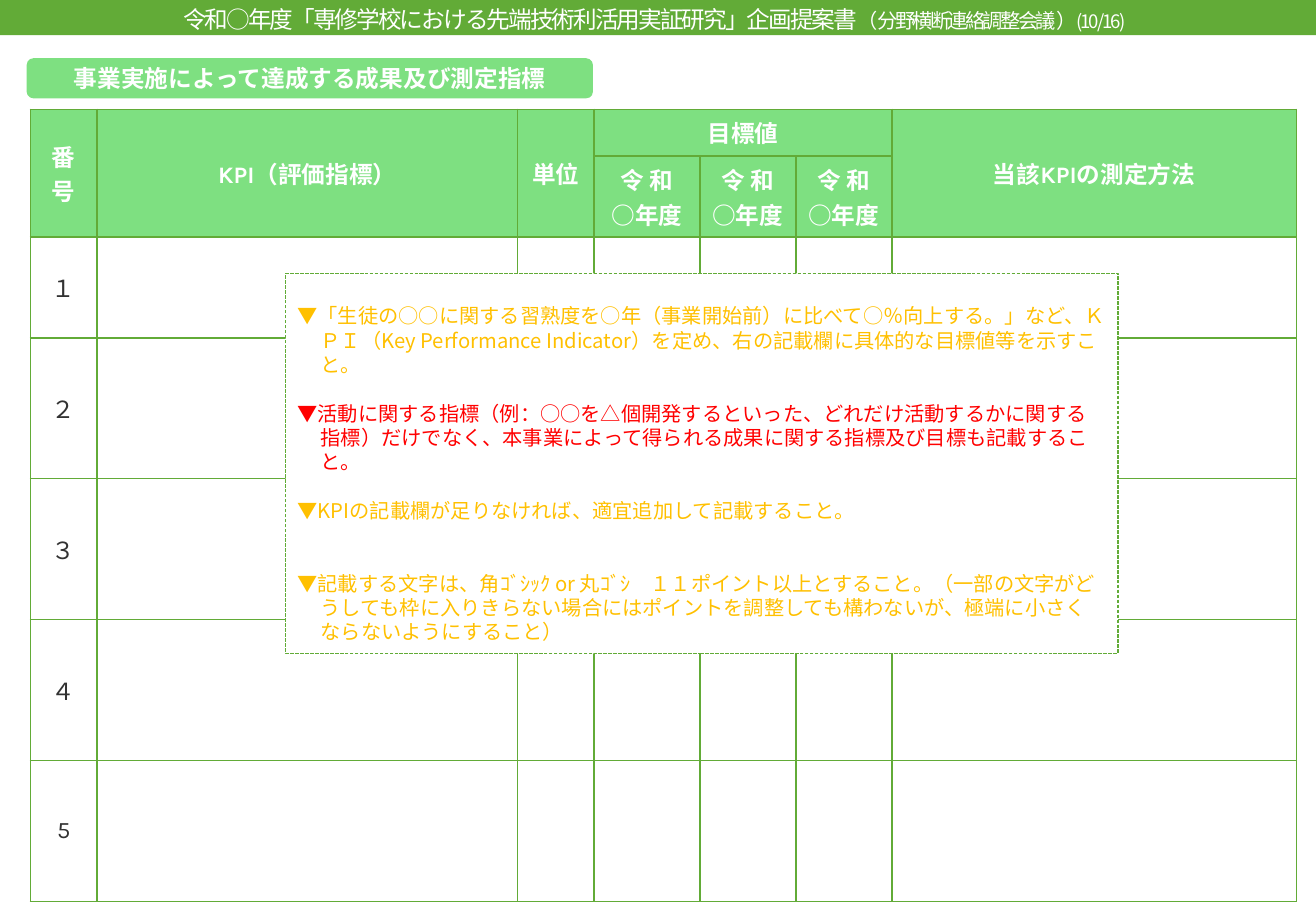
from dataclasses import dataclass

from pptx import Presentation
from pptx.dml.color import RGBColor
from pptx.enum.dml import MSO_LINE
from pptx.enum.shapes import MSO_SHAPE as Shape
from pptx.enum.text import MSO_ANCHOR as Anchor, PP_ALIGN as Align
from pptx.oxml import parse_xml
from pptx.oxml.ns import nsdecls
from pptx.util import Inches, Pt


@dataclass(frozen=True)
class Theme:
    green: str = "62AB37"
    light_green: str = "7EE081"
    white: str = "FFFFFF"
    ink: str = "323232"
    amber: str = "FFC000"
    red: str = "FF0000"
    latin: str = "Karla"
    japanese: str = "Noto Sans CJK JP"
    heading_size: float = 14
    guide_size: float = 12
    page_size: float = 11
    guide_pitch: float = 14.4


class Page:
    def __init__(self, deck, theme):
        self.theme = theme
        self.shapes = deck.slides.add_slide(deck.slide_layouts[6]).shapes

    def style(self, span, size, color, font, bold=False, spacing=0):
        span.font.size = Pt(size)
        span.font.bold = bold
        span.font.color.rgb = RGBColor.from_string(color)
        span.font.name = font
        properties = span._r.get_or_add_rPr()
        properties.append(parse_xml(f'<a:ea {nsdecls("a")} typeface="{self.theme.japanese}"/>'))
        if spacing:
            properties.set("spc", str(round(spacing * 100)))

    def shape(self, kind, place, fill):
        box = self.shapes.add_shape(kind, *map(Inches, place))
        box.shadow.inherit = False
        box.fill.solid()
        box.fill.fore_color.rgb = RGBColor.from_string(fill)
        box.line.fill.background()
        return box

    def section(self, text, place):
        box = self.shape(Shape.ROUNDED_RECTANGLE, place, self.theme.light_green)
        frame = box.text_frame
        frame.text = text
        frame.vertical_anchor = Anchor.MIDDLE
        para = frame.paragraphs[0]
        para.alignment = Align.CENTER
        self.style(para.runs[0], self.theme.heading_size, self.theme.white, self.theme.latin, True)

    def title(self, pieces, place):
        box = self.shapes.add_textbox(*map(Inches, place))
        frame = box.text_frame
        frame.word_wrap = True
        frame.margin_top = Inches(0.04)
        para = frame.paragraphs[0]
        para.alignment = Align.CENTER
        for text, size, spacing in pieces:
            span = para.add_run()
            span.text = text
            self.style(span, size, self.theme.white, self.theme.japanese, spacing=spacing)

    def guidance(self, guides, place):
        box = self.shape(Shape.RECTANGLE, place, self.theme.white)
        box.line.color.rgb = RGBColor.from_string(self.theme.green)
        box.line.width = Pt(0.75)
        box.line.dash_style = MSO_LINE.SQUARE_DOT
        frame = box.text_frame
        frame.word_wrap = True
        frame.vertical_anchor = Anchor.TOP
        frame.margin_top = Inches(0.25)
        frame.text = "\n".join(text for text, color, gap in guides)
        for para, (text, color, gap) in zip(frame.paragraphs, guides):
            para.alignment = Align.LEFT
            para.line_spacing = Pt(self.theme.guide_pitch)
            para.space_before = Pt(gap * self.theme.guide_pitch)
            properties = para._p.get_or_add_pPr()
            properties.set("marL", str(Inches(0.19)))
            properties.set("indent", str(-Inches(0.19)))
            self.style(para.runs[0], self.theme.guide_size, color, self.theme.japanese)

    def table(self, place, widths, heights, merges, texts, header_rows):
        grid = self.shapes.add_table(len(heights), len(widths), *map(Inches, place)).table
        grid.first_row = grid.horz_banding = False
        for column, width in zip(grid.columns, widths):
            column.width = Inches(width)
        for row, height in zip(grid.rows, heights):
            row.height = Inches(height)
        for start, end in merges:
            grid.cell(*start).merge(grid.cell(*end))
        for row in range(len(heights)):
            for column in range(len(widths)):
                header = row < header_rows
                self.cell(grid.cell(row, column), texts.get((row, column), ""), header)

    def cell(self, cell, text, header):
        properties = cell._tc.get_or_add_tcPr()
        for side in "LRTB":
            properties.append(parse_xml(
                f'<a:ln{side} {nsdecls("a")} w="{Pt(1)}"><a:solidFill>'
                f'<a:srgbClr val="{self.theme.green}"/></a:solidFill></a:ln{side}>'))
        if header:
            cell.fill.solid()
            cell.fill.fore_color.rgb = RGBColor.from_string(self.theme.light_green)
        else:
            cell.fill.background()
        cell.vertical_anchor = Anchor.MIDDLE
        cell.text_frame.text = text
        font = self.theme.japanese if "\n" in text else self.theme.latin
        color = self.theme.white if header else self.theme.ink
        for para in cell.text_frame.paragraphs:
            para.alignment = Align.CENTER
            for span in para.runs:
                self.style(span, self.theme.heading_size, color, font, header)


def main():
    deck = Presentation()
    deck.slide_width, deck.slide_height = Inches(10.83), Inches(7.5)
    theme = Theme()
    page = Page(deck, theme)

    page.section("事業実施によって達成する成果及び測定指標", (0.22, 0.48, 4.66, 0.33))

    headings = {0: "番号", 1: "KPI（評価指標）", 2: "単位", 6: "当該KPIの測定方法"}
    texts = {(0, column): text for column, text in headings.items()}
    texts[0, 3] = "目標値"
    texts |= {(1, column): "令 和\n○年度" for column in (3, 4, 5)}
    texts |= {(row, 0): number for row, number in enumerate("１２３４5", 2)}
    merges = [((0, column), (1, column)) for column in headings] + [((0, 3), (0, 5))]
    page.table((0.25, 0.9, 10.44, 6.4), [0.55, 3.46, 0.63, 0.87, 0.79, 0.79, 3.33],
               [0.38, 0.57, 0.83] + [1.16] * 4, merges, texts, header_rows=2)

    page.guidance([
        ("▼「生徒の○○に関する習熟度を○年（事業開始前）に比べて○％向上する。」など、ＫＰＩ（Key Performance Indicator）を定め、右の記載欄に具体的な目標値等を示すこと。", theme.amber, 0),
        ("▼活動に関する指標（例：○○を△個開発するといった、どれだけ活動するかに関する指標）だけでなく、本事業によって得られる成果に関する指標及び目標も記載すること。", theme.red, 1),
        ("▼KPIの記載欄が足りなければ、適宜追加して記載すること。", theme.amber, 1),
        ("▼記載する文字は、角ｺﾞｼｯｸ or 丸ｺﾞｼ　１１ポイント以上とすること。（一部の文字がどうしても枠に入りきらない場合にはポイントを調整しても構わないが、極端に小さくならないようにすること）", theme.amber, 2),
    ], (2.35, 2.25, 6.85, 3.13))

    page.shape(Shape.RECTANGLE, (0, 0, 10.83, 0.29), theme.green)
    page.title([
        ("令和○年度「専修学校における先端技術利活用実証研究」企画提案書", theme.heading_size, -1.2),
        ("（", theme.guide_size, -1.2),
        ("分野横断連絡調整会議", theme.guide_size, -1.6),
        ("）", theme.guide_size, -1.2),
        ("(10/16)", theme.page_size, -1.2),
    ], (0, 0, 10.77, 0.34))

    deck.save("out.pptx")


if __name__ == "__main__":
    main()
